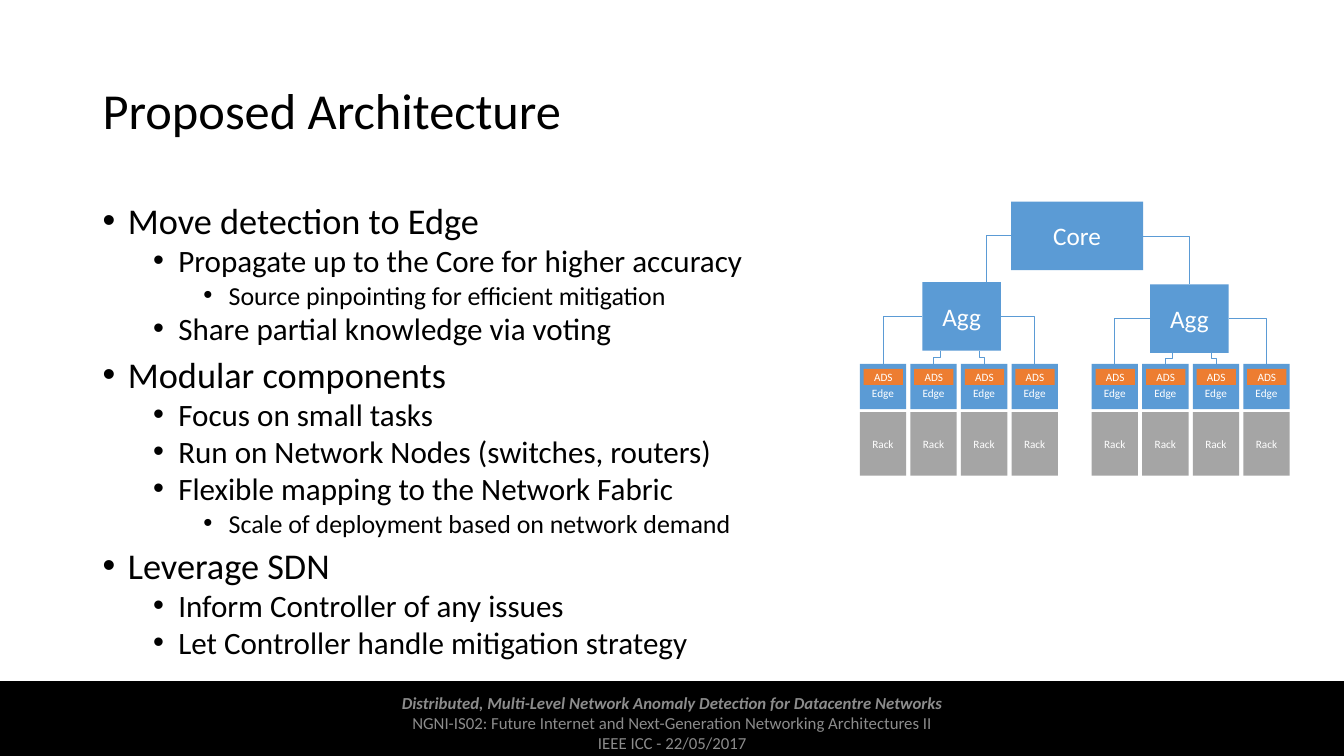
from dataclasses import dataclass

import lxml.etree
import pptx
import pptx.dml.color
import pptx.enum.shapes
import pptx.enum.text
import pptx.oxml.ns
import pptx.shapes.autoshape
import pptx.slide
import pptx.text.text
import pptx.util

SLIDE_WIDTH = pptx.util.Inches(13.33)
SLIDE_HEIGHT = pptx.util.Inches(7.5)
COLUMN = SLIDE_WIDTH / 160
ROW = SLIDE_HEIGHT / 90
INSET_X = pptx.util.Inches(0.1)
INSET_Y = pptx.util.Inches(0.05)
ALIGN = pptx.enum.text.PP_ALIGN
ANCHOR = pptx.enum.text.MSO_ANCHOR


@dataclass(frozen=True)
class Theme:
    font: str = "Calibri"
    ink: str = "000000"
    footer: str = "8C8C8C"
    white: str = "FFFFFF"
    switch: str = "5B9BD5"
    rack: str = "A5A5A5"
    detector: str = "ED7D31"
    title_size: float = 36
    level_sizes: tuple[float, ...] = (25.9, 22.2, 18.5)
    footer_size: float = 12
    node_size: float = 18
    small_size: float = 8
    link_width: float = 0.5


THEME = Theme()


@dataclass(frozen=True)
class Area:
    left: float
    top: float
    width: float
    height: float

    @property
    def middle_x(self) -> float:
        return self.left + self.width / 2

    @property
    def middle_y(self) -> float:
        return self.top + self.height / 2

    @property
    def right(self) -> float:
        return self.left + self.width

    @property
    def bottom(self) -> float:
        return self.top + self.height

    def emu(self) -> tuple[int, int, int, int]:
        return (round(self.left * COLUMN), round(self.top * ROW),
                round(self.width * COLUMN), round(self.height * ROW))


@dataclass(frozen=True)
class Bullet:
    level: int
    text: str


@dataclass(frozen=True)
class Pod:
    switch: Area
    left: float


BULLETS = (
    Bullet(0, "Move detection to Edge"),
    Bullet(1, "Propagate up to the Core for higher accuracy"),
    Bullet(2, "Source pinpointing for efficient mitigation"),
    Bullet(1, "Share partial knowledge via voting"),
    Bullet(0, "Modular components"),
    Bullet(1, "Focus on small tasks"),
    Bullet(1, "Run on Network Nodes (switches, routers)"),
    Bullet(1, "Flexible mapping to the Network Fabric"),
    Bullet(2, "Scale of deployment based on network demand"),
    Bullet(0, "Leverage SDN"),
    Bullet(1, "Inform Controller of any issues"),
    Bullet(1, "Let Controller handle mitigation strategy"),
)
FOOTER = (
    "Distributed, Multi-Level Network Anomaly Detection for Datacentre Networks",
    "NGNI-IS02: Future Internet and Next-Generation Networking Architectures II",
    "IEEE ICC - 22/05/2017",
)
CORE = Area(120.36, 24, 15.72, 8.16)
PODS = (
    Pod(Area(109.8, 33.6, 9.36, 8.16), 102.36),
    Pod(Area(136.92, 33.84, 9.36, 8.16), 129.96),
)
RACK_STEP = 6.02


def color(value: str) -> pptx.dml.color.RGBColor:
    return pptx.dml.color.RGBColor.from_string(value)


def write(para: pptx.text.text._Paragraph, text: str, *, size: float, ink: str,
          align: ALIGN = ALIGN.LEFT, bold: bool = False, italic: bool = False,
          spacing: float = 1.0, before: float = 0) -> None:
    para.alignment = align
    para.line_spacing = spacing
    para.space_before = pptx.util.Pt(before)
    span = para.add_run()
    span.text = text
    span.font.name = THEME.font
    span.font.size = pptx.util.Pt(size)
    span.font.color.rgb = color(ink)
    span.font.bold = bold
    span.font.italic = italic


def add_text_frame(page: pptx.slide.Slide, area: Area, anchor: ANCHOR) -> pptx.text.text.TextFrame:
    frame = page.shapes.add_textbox(*area.emu()).text_frame
    frame.word_wrap = True
    frame.vertical_anchor = anchor
    frame.margin_left = frame.margin_right = INSET_X
    frame.margin_top = frame.margin_bottom = INSET_Y
    return frame


def next_para(frame: pptx.text.text.TextFrame, index: int) -> pptx.text.text._Paragraph:
    return frame.add_paragraph() if index else frame.paragraphs[0]


def add_block(page: pptx.slide.Slide, area: Area, fill: str) -> pptx.shapes.autoshape.Shape:
    box = page.shapes.add_shape(pptx.enum.shapes.MSO_SHAPE.RECTANGLE, *area.emu())
    box.shadow.inherit = False
    box.fill.solid()
    box.fill.fore_color.rgb = color(fill)
    box.line.fill.background()
    return box


def add_node(page: pptx.slide.Slide, area: Area, label: str, fill: str,
             size: float, top_inset: float = 0) -> None:
    frame = add_block(page, area, fill).text_frame
    frame.vertical_anchor = ANCHOR.MIDDLE
    frame.margin_left = frame.margin_right = frame.margin_bottom = 0
    frame.margin_top = round(top_inset * ROW)
    write(frame.paragraphs[0], label, size=size, ink=THEME.white, align=ALIGN.CENTER)


def add_link(page: pptx.slide.Slide, start: tuple[float, float], end: tuple[float, float],
             *, corner: bool = False, upright: bool = False) -> None:
    x1, y1, x2, y2 = (round(value) for value in (
        start[0] * COLUMN, start[1] * ROW, end[0] * COLUMN, end[1] * ROW))
    if upright:
        middle_x, middle_y = (x1 + x2) // 2, (y1 + y2) // 2
        half_x, half_y = (x2 - x1) // 2, (y2 - y1) // 2
        x1, x2 = middle_x - half_y, middle_x + half_y
        y1, y2 = middle_y + half_x, middle_y - half_x
    link = page.shapes.add_connector(pptx.enum.shapes.MSO_CONNECTOR.ELBOW, x1, y1, x2, y2)
    link.line.color.rgb = color(THEME.switch)
    link.line.width = pptx.util.Pt(THEME.link_width)
    properties = link._element.spPr
    if corner:
        properties.find(pptx.oxml.ns.qn("a:prstGeom")).set("prst", "bentConnector2")
    if upright:
        properties.find(pptx.oxml.ns.qn("a:xfrm")).set("rot", "5400000")
    lxml.etree.SubElement(properties, pptx.oxml.ns.qn("a:effectLst"))


def add_bullets(page: pptx.slide.Slide) -> None:
    frame = add_text_frame(page, Area(11.04, 24, 83.64, 55.32), ANCHOR.TOP)
    for index, bullet in enumerate(BULLETS):
        para = next_para(frame, index)
        para.level = bullet.level
        properties = para._p.get_or_add_pPr()
        properties.set("marL", str(pptx.util.Inches(0.25 + 0.5 * bullet.level)))
        properties.set("indent", str(-pptx.util.Inches(0.25)))
        lxml.etree.SubElement(properties, pptx.oxml.ns.qn("a:buFont")).set("typeface", "Arial")
        lxml.etree.SubElement(properties, pptx.oxml.ns.qn("a:buChar")).set("char", "•")
        before = 0 if index == 0 else 5 if bullet.level else 10
        write(para, bullet.text, size=THEME.level_sizes[bullet.level], ink=THEME.ink,
              spacing=0.8, before=before)


def add_footer(page: pptx.slide.Slide) -> None:
    band = add_block(page, Area(0, 81.12, 160, 8.88), THEME.ink)
    band.line.color.rgb = color(THEME.ink)
    band.line.width = pptx.util.Pt(1)
    frame = add_text_frame(page, Area(45.84, 81.12, 68.4, 9.84), ANCHOR.MIDDLE)
    for index, text in enumerate(FOOTER):
        write(next_para(frame, index), text, size=THEME.footer_size, ink=THEME.footer,
              align=ALIGN.CENTER, bold=index == 0, italic=index == 0)


def add_pod(page: pptx.slide.Slide, pod: Pod) -> None:
    switch = pod.switch
    add_node(page, switch, "Agg", THEME.switch, THEME.node_size)
    edges = [Area(pod.left + index * RACK_STEP, 43.32, 5.52, 5.4) for index in range(4)]
    for edge in edges:
        add_node(page, edge, "Edge", THEME.switch, THEME.small_size, top_inset=1.62)
        add_node(page, Area(edge.left, 49.08, edge.width, 7.56), "Rack",
                 THEME.rack, THEME.small_size)
        add_node(page, Area(edge.left + 0.46, edge.top + 0.6, 4.68, 1.92), "ADS",
                 THEME.detector, THEME.small_size)
    for side, edge in ((switch.left, edges[0]), (switch.right, edges[3])):
        add_link(page, (side, switch.middle_y), (edge.middle_x, edge.top), corner=True)
    for shift, edge in ((0.84, edges[1]), (-0.6, edges[2])):
        add_link(page, (edge.middle_x + shift, switch.bottom), (edge.middle_x, edge.top),
                 upright=True)


def main() -> None:
    deck = pptx.Presentation()
    deck.slide_width, deck.slide_height = SLIDE_WIDTH, SLIDE_HEIGHT
    page = deck.slides.add_slide(deck.slide_layouts[6])
    title = add_text_frame(page, Area(11.04, 4.8, 138, 17.4), ANCHOR.MIDDLE)
    write(title.paragraphs[0], "Proposed Architecture", size=THEME.title_size,
          ink=THEME.ink, spacing=0.9)
    add_bullets(page)
    add_footer(page)
    add_node(page, CORE, "Core", THEME.switch, THEME.node_size)
    for pod in PODS:
        add_pod(page, pod)
    left, right = (pod.switch for pod in PODS)
    add_link(page, (CORE.left, CORE.middle_y), (left.middle_x, left.top))
    add_link(page, (CORE.right, CORE.middle_y), (right.middle_x, right.top), corner=True)
    deck.save("out.pptx")


if __name__ == "__main__":
    main()
